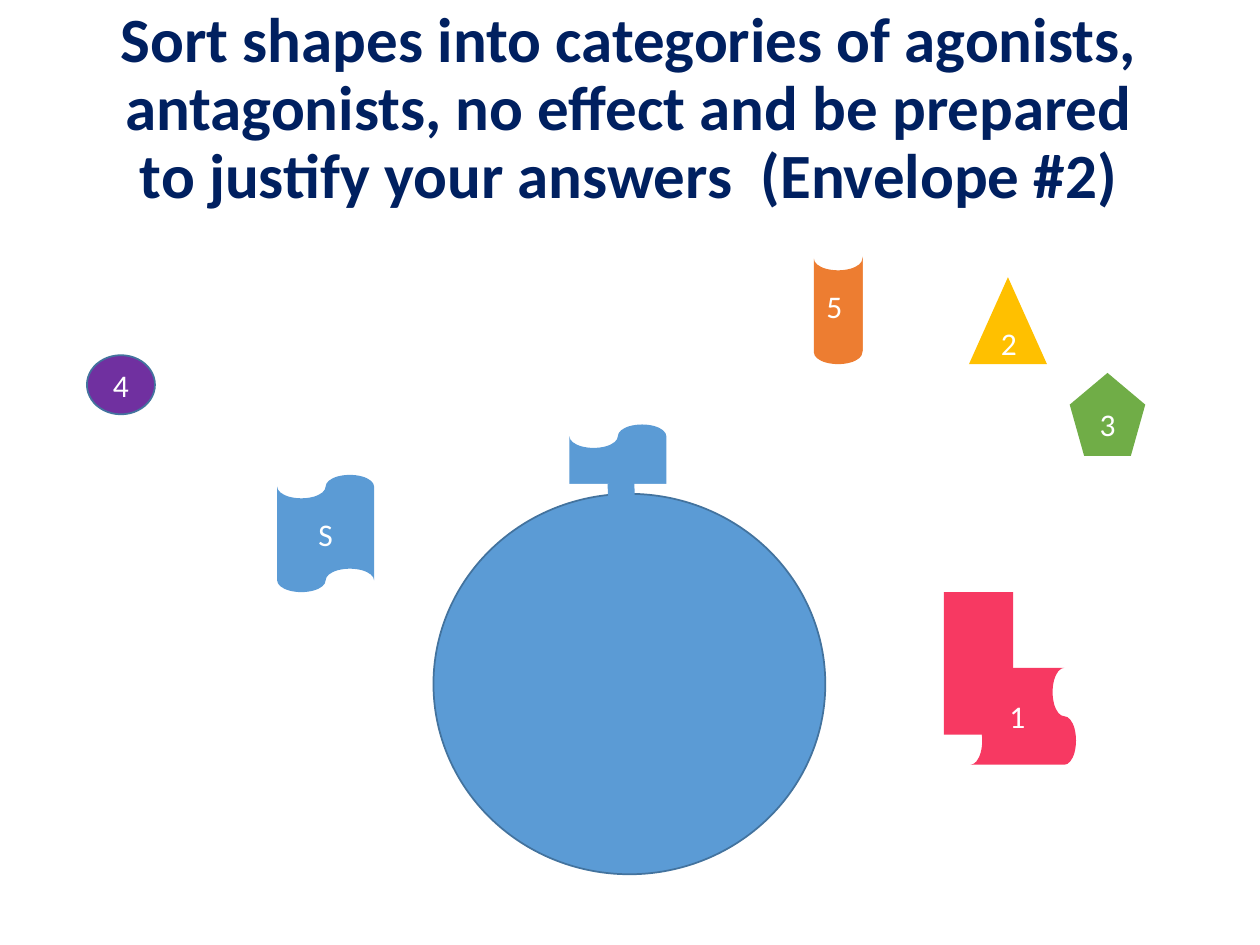
from pptx import Presentation
from pptx.dml.color import RGBColor
from pptx.enum.shapes import MSO_SHAPE
from pptx.enum.text import MSO_ANCHOR, MSO_AUTO_SIZE, PP_ALIGN
from pptx.util import Pt

WHITE, BLUE, OUTLINE = "FFFFFF", "5B9BD5", "43739E"
PINK, ORANGE = "F73962", "ED7D31"
TAPE = MSO_SHAPE.FLOWCHART_PUNCHED_TAPE
TAPE_SIZE = (55.4, 67)


def color(value):
    return RGBColor.from_string(value)


def apply(target, values):
    for name, value in values.items():
        setattr(target, name, value)


def write(box, text, font, align):
    frame = box.text_frame
    apply(frame, {"word_wrap": True, "auto_size": MSO_AUTO_SIZE.NONE,
                  "vertical_anchor": MSO_ANCHOR.MIDDLE})
    para = frame.paragraphs[0]
    para.alignment = align
    span = para.add_run()
    span.text = text
    tint = font.pop("color")
    apply(span.font, {"name": "Calibri", **font})
    span.font.color.rgb = color(tint)
    return para


def add_piece(shapes, kind, box, fill, line=None, label=None,
              align=PP_ALIGN.CENTER, rotation=0):
    """Add a flat shape, with an optional outline and white label."""
    piece = shapes.add_shape(kind, *map(Pt, box))
    piece.shadow.inherit = False
    piece.rotation = rotation
    piece.fill.solid()
    piece.fill.fore_color.rgb = color(fill)
    if line:
        piece.line.color.rgb = color(line)
        piece.line.width = Pt(1)
    else:
        piece.line.fill.background()
    if label:
        write(piece, label, {"size": Pt(18), "color": WHITE}, align)
    return piece


def add_title(page, box, text):
    title = page.shapes.title
    apply(title, dict(zip(("left", "top", "width", "height"), map(Pt, box))))
    para = write(title, text, {"size": Pt(36), "bold": True, "color": "002060"},
                 PP_ALIGN.CENTER)
    para.line_spacing = 0.9


def add_receptor(page, left, top):
    """A round cell whose binding site is the upper half of a tape."""
    site = page.shapes.add_group_shape().shapes
    add_piece(site, TAPE, (left + 77.7, top, *TAPE_SIZE), BLUE)
    add_piece(site, MSO_SHAPE.RECTANGLE, (left + 66.2, top + 33.9, 79.2, 33.1), WHITE)
    add_piece(page.shapes, MSO_SHAPE.OVAL, (left, top + 39.6, 223.9, 217.4), BLUE, OUTLINE)
    add_piece(page.shapes, MSO_SHAPE.DIAGONAL_STRIPE,
              (left + 97.9, top + 29.6, 35.3, 61.2), BLUE, rotation=328.4)


def add_half_tape(page, left, top):
    """A tape whose right half is covered."""
    add_piece(page.shapes, TAPE, (left, top, *TAPE_SIZE), ORANGE,
              label="5", align=PP_ALIGN.LEFT)
    add_piece(page.shapes, MSO_SHAPE.RECTANGLE, (left + 28, top - 12.2, 39.6, 81.4), WHITE)


def add_blocked_tape(page, left, top):
    """A sideways tape joined to an upright bar."""
    parts = page.shapes.add_group_shape().shapes
    add_piece(parts, MSO_SHAPE.RECTANGLE, (left, top, 39.6, 81.4), PINK, rotation=180)
    tape = add_piece(parts, TAPE, (left + 14.4, top + 37.4, *TAPE_SIZE), PINK,
                     label="1", rotation=270)
    tape.text_frame._txBody.bodyPr.set("vert", "vert")


def main():
    deck = Presentation()
    apply(deck, {"slide_width": Pt(720), "slide_height": Pt(540)})
    page = deck.slides.add_slide(deck.slide_layouts[5])
    add_title(page, (49, 10.8, 620.6, 104.4),
              "Sort shapes into categories of agonists, antagonists, no effect "
              "and be prepared to justify your answers  (Envelope #2)")
    add_receptor(page, 247.7, 242.6)
    ligands = [
        (MSO_SHAPE.OVAL, (49.7, 203, 38.9, 33.8), "7030A0", OUTLINE, "4"),
        (MSO_SHAPE.ISOSCELES_TRIANGLE, (553.7, 158.4, 44.6, 49.7), "FFC000", None, "2"),
        (MSO_SHAPE.REGULAR_PENTAGON, (611.3, 213.1, 43.2, 47.5), "70AD47", None, "3"),
        (TAPE, (158.4, 271.4, *TAPE_SIZE), BLUE, None, "S"),
    ]
    for ligand in ligands:
        add_piece(page.shapes, *ligand)
    add_half_tape(page, 465.1, 141.1)
    add_blocked_tape(page, 539.3, 338.4)
    deck.save("out.pptx")


if __name__ == "__main__":
    main()
